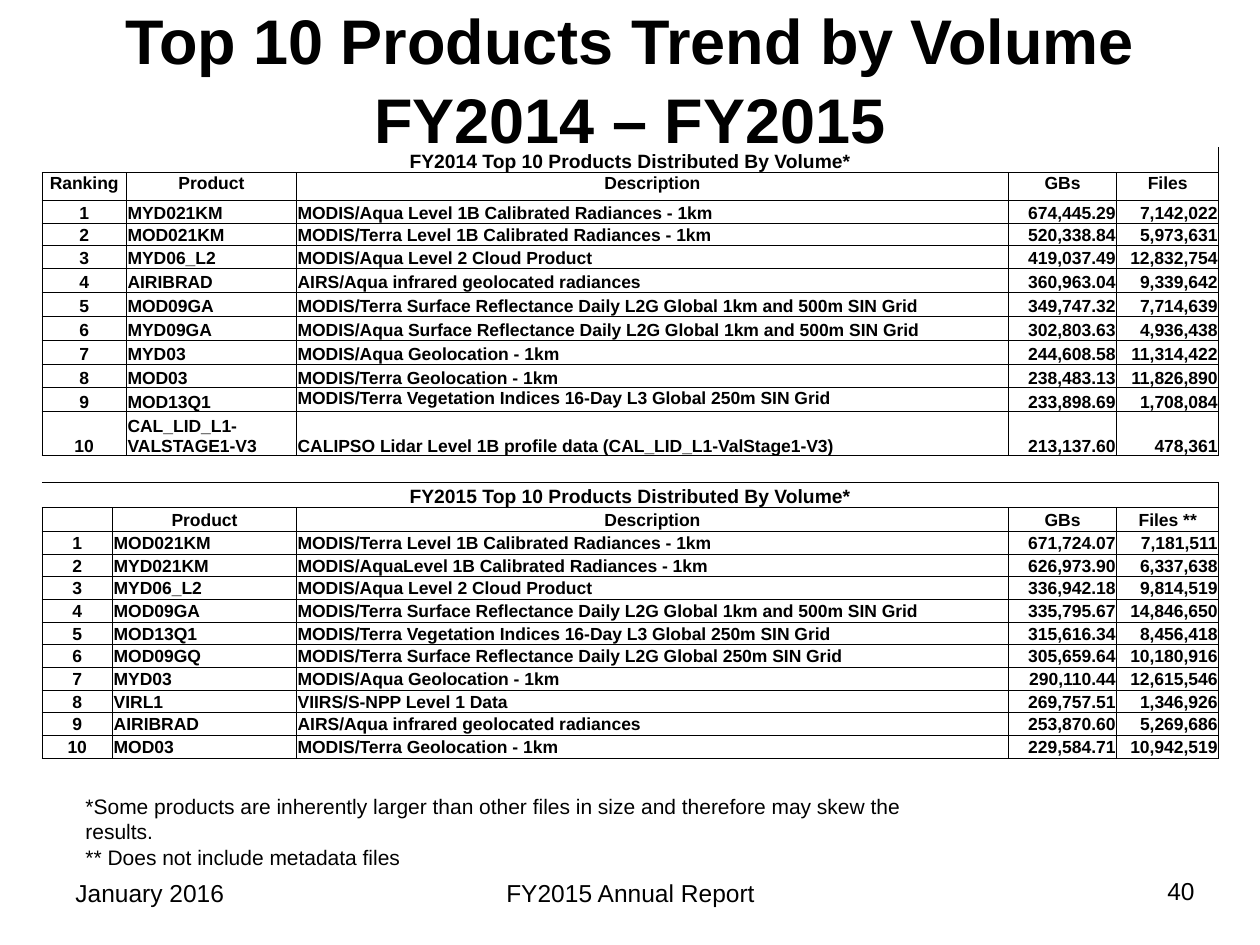
from lxml import etree
from pptx import Presentation
from pptx.dml.color import RGBColor
from pptx.enum.text import MSO_ANCHOR, MSO_AUTO_SIZE, PP_ALIGN
from pptx.oxml.ns import qn
from pptx.util import Inches, Pt

LEFT, CENTER, RIGHT = PP_ALIGN.LEFT, PP_ALIGN.CENTER, PP_ALIGN.RIGHT
TOP, MIDDLE, BOTTOM = MSO_ANCHOR.TOP, MSO_ANCHOR.MIDDLE, MSO_ANCHOR.BOTTOM
BLACK = "000000"
NO_STYLE = "{2D5ABB26-0587-4C30-8999-92F81FD0307C}"

prs = Presentation()
prs.slide_width, prs.slide_height = Inches(10), Inches(7.5)
s = prs.slides.add_slide(prs.slide_layouts[5])


def write(tf, lines, size, align=LEFT, bold=False):
    tf.text = "\n".join(lines)
    for p in tf.paragraphs:
        p.alignment = align
        for r in p.runs:
            for name, value in {"name": "Arial", "size": Pt(size), "bold": bold}.items():
                setattr(r.font, name, value)
            r.font.color.rgb = RGBColor.from_string(BLACK)
        if not p.runs:
            # An empty cell keeps its row low only with a small end mark.
            etree.SubElement(p._p, qn("a:endParaRPr"), sz=str(size * 100))


def box(x, y, w, h):
    """Turn percentages of the slide into left, top, width and height."""
    return (int(prs.slide_width * x / 100), int(prs.slide_height * y / 100),
            int(prs.slide_width * w / 100), int(prs.slide_height * h / 100))


# Title
title = s.shapes.title
title.left, title.top, title.width, title.height = box(5.4, 0.93, 89.2, 14.4)
tf = title.text_frame
write(tf, ["Top 10 Products Trend by Volume\vFY2014 – FY2015"], 36, CENTER, True)
tf.vertical_anchor, tf.auto_size = MIDDLE, MSO_AUTO_SIZE.NONE
tf.paragraphs[0].line_spacing = 1.05

# Footnotes and footer
notes = ["*Some products are inherently larger than other files in size "
         "and therefore may skew the results.",
         "** Does not include metadata files"]
for place, lines, size, align in [
    ((72.5, 92, 23.3, 6.93), ["40"], 14, RIGHT),
    ((5.8, 83.33, 72.5, 6.67), notes, 12, LEFT),
    ((5, 92.27, 23.3, 6.93), ["January 2016"], 14, LEFT),
    ((34.2, 92.27, 31.7, 6.93), ["FY2015 Annual Report"], 14, CENTER),
]:
    tf = s.shapes.add_textbox(*box(*place)).text_frame
    tf.word_wrap = True
    write(tf, lines, size, align)

# Ranked products: product, description, GBs, files
fy2014 = [
    ("MYD021KM", "MODIS/Aqua Level 1B Calibrated Radiances - 1km", "674,445.29", "7,142,022"),
    ("MOD021KM", "MODIS/Terra Level 1B Calibrated Radiances - 1km", "520,338.84", "5,973,631"),
    ("MYD06_L2", "MODIS/Aqua Level 2 Cloud Product", "419,037.49", "12,832,754"),
    ("AIRIBRAD", "AIRS/Aqua infrared geolocated radiances", "360,963.04", "9,339,642"),
    ("MOD09GA", "MODIS/Terra Surface Reflectance Daily L2G Global 1km and 500m SIN Grid",
     "349,747.32", "7,714,639"),
    ("MYD09GA", "MODIS/Aqua Surface Reflectance Daily L2G Global 1km and 500m SIN Grid",
     "302,803.63", "4,936,438"),
    ("MYD03", "MODIS/Aqua Geolocation - 1km", "244,608.58", "11,314,422"),
    ("MOD03", "MODIS/Terra Geolocation - 1km", "238,483.13", "11,826,890"),
    ("MOD13Q1", "MODIS/Terra Vegetation Indices 16-Day L3 Global 250m SIN Grid",
     "233,898.69", "1,708,084"),
    ("CAL_LID_L1-VALSTAGE1-V3", "CALIPSO Lidar Level 1B profile data (CAL_LID_L1-ValStage1-V3)",
     "213,137.60", "478,361"),
]
fy2015 = [
    ("MOD021KM", "MODIS/Terra Level 1B Calibrated Radiances - 1km", "671,724.07", "7,181,511"),
    ("MYD021KM", "MODIS/AquaLevel 1B Calibrated Radiances - 1km", "626,973.90", "6,337,638"),
    ("MYD06_L2", "MODIS/Aqua Level 2 Cloud Product", "336,942.18", "9,814,519"),
    ("MOD09GA", "MODIS/Terra Surface Reflectance Daily L2G Global 1km and 500m SIN Grid",
     "335,795.67", "14,846,650"),
    ("MOD13Q1", "MODIS/Terra Vegetation Indices 16-Day L3 Global 250m SIN Grid",
     "315,616.34", "8,456,418"),
    ("MOD09GQ", "MODIS/Terra Surface Reflectance Daily L2G Global 250m SIN Grid",
     "305,659.64", "10,180,916"),
    ("MYD03", "MODIS/Aqua Geolocation - 1km", "290,110.44", "12,615,546"),
    ("VIRL1", "VIIRS/S-NPP Level 1 Data", "269,757.51", "1,346,926"),
    ("AIRIBRAD", "AIRS/Aqua infrared geolocated radiances", "253,870.60", "5,269,686"),
    ("MOD03", "MODIS/Terra Geolocation - 1km", "229,584.71", "10,942,519"),
]

# One table holds both years, with a spacer row between them
col_widths = [0.56, 0.11, 1.35, 5.65, 0.86, 0.81]
row_heights = [0.2, 0.22] + [0.18] * 3 + [0.19] * 6 + [0.35, 0.21, 0.2, 0.19] + [0.18] * 10
frame = s.shapes.add_table(len(row_heights), len(col_widths), *box(3.33, 15.6, 93.3, 64.8))
table = frame.table
table.first_row = table.horz_banding = False
table._tbl.tblPr.find(qn("a:tableStyleId")).text = NO_STYLE
for col, width in zip(table.columns, col_widths):
    col.width = Inches(width)
for row, height in zip(table.rows, row_heights):
    row.height = Inches(height)

SPACER, TITLE_ROWS = 12, (0, 13)
for i, row in enumerate(table.rows):
    sides = "T" if i == SPACER else "RB" if i in TITLE_ROWS else "LRTB"
    for cell in row.cells:
        for name, value in {"margin_left": 0.01, "margin_right": 0.01,
                            "margin_top": 0.01, "margin_bottom": 0}.items():
            setattr(cell, name, Inches(value))
        tcPr = cell._tc.get_or_add_tcPr()
        for side in sides:
            ln = etree.SubElement(tcPr, qn("a:ln" + side), w=str(Pt(0.5)))
            fill = etree.SubElement(ln, qn("a:solidFill"))
            etree.SubElement(fill, qn("a:srgbClr"), val=BLACK)
        cell.fill.background()
        write(cell.text_frame, [""], 10)

# The rank takes two columns in FY2014, the product takes two in FY2015
for year, first, products, rank, files, starts, head_anchor, body_anchor in [
    ("FY2014", 0, fy2014, "Ranking", "Files", (0, 2, 3, 4, 5), TOP, BOTTOM),
    ("FY2015", 13, fy2015, "", "Files **", (0, 1, 3, 4, 5), MIDDLE, MIDDLE),
]:
    cell = table.cell(first, 0)
    cell.merge(table.cell(first, 5))
    cell.vertical_anchor = BOTTOM
    write(cell.text_frame, [year + " Top 10 Products Distributed By Volume*"], 11, CENTER, True)

    rows = [(rank, "Product", "Description", "GBs", files)]
    rows += [(str(n), *product) for n, product in enumerate(products, 1)]
    for n, values in enumerate(rows):
        i = first + 1 + n
        merge_at = 0 if starts[1] == 2 else 1
        table.cell(i, merge_at).merge(table.cell(i, merge_at + 1))
        aligns = (CENTER, LEFT, LEFT, RIGHT, RIGHT) if n else [CENTER] * 5
        for j, text, align in zip(starts, values, aligns):
            if text:
                cell = table.cell(i, j)
                cell.vertical_anchor = body_anchor if n else head_anchor
                write(cell.text_frame, [text], 10, align, True)
        if year == "FY2014" and n == 9:
            table.cell(i, 3).vertical_anchor = TOP
table.cell(SPACER, 0).merge(table.cell(SPACER, 1))

prs.save("out.pptx")
